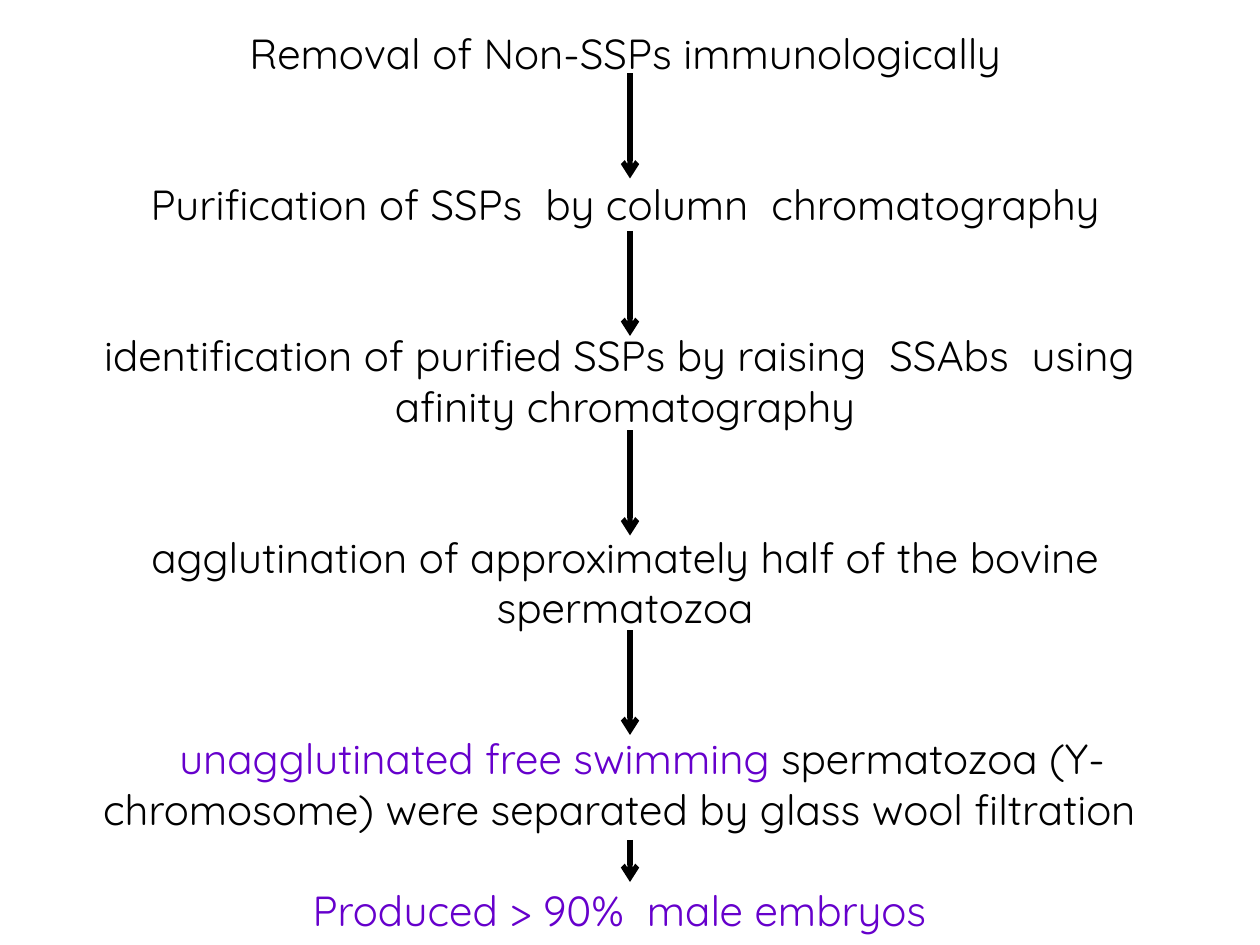
from lxml.etree import SubElement as Sub
from pptx import Presentation
from pptx.dml.color import RGBColor as Rgb
from pptx.enum.shapes import MSO_CONNECTOR as Conn
from pptx.enum.text import MSO_AUTO_SIZE as Auto, PP_ALIGN as Align
from pptx.oxml.ns import qn
from pptx.util import Inches, Pt

WIDE, HIGH = Inches(10), Inches(7.5)
ROWS = 90
FONT, SIZE, LINE = "Quicksand", 24, 28.8
HUES = {"ink": "000000", "key": "6600CC"}

STEPS = [
    (0, 0, [("Removal of Non-SSPs immunologically", "ink")]),
    (2, 0, [("Purification of SSPs  by column  chromatography", "ink")]),
    (2, 0, [("identification of purified SSPs by raising  SSAbs  using  "
             "afinity chromatography", "ink")]),
    (2, 0, [("agglutination of approximately half of the bovine "
             "spermatozoa", "ink")]),
    (2, 0.27, [("unagglutinated free swimming", "key"),
               (" spermatozoa (Y-chromosome) were separated by "
                "glass wool filtration ", "ink")]),
    (1, 0, [("Produced > 90%  male embryos ", "key")]),
]
ARROWS = [(7, 10), (22, 10), (41, 10), (60, 10), (80, 4)]


def row(num):
    return round(HIGH * num / ROWS)


def hue(name):
    return Rgb.from_string(HUES[name])


def add_step(para, gap, indent, runs):
    para.alignment = Align.CENTER
    para.space_before = Pt(gap * LINE)
    para.font.name = FONT
    para.font.size = Pt(SIZE)
    if indent:
        para._p.get_or_add_pPr().set("indent", str(Inches(indent)))
    for text, name in runs:
        run = para.add_run()
        run.text = text
        run.font.color.rgb = hue(name)


def add_flow(slide):
    box = slide.shapes.add_textbox(
        round(WIDE * 0.025), row(2), round(WIDE * 0.942), row(88.4))
    frame = box.text_frame
    frame.word_wrap = True
    frame.auto_size = Auto.SHAPE_TO_FIT_TEXT
    for num, step in enumerate(STEPS):
        para = frame.add_paragraph() if num else frame.paragraphs[0]
        add_step(para, *step)


def add_arrow(slide, top, span):
    mid = WIDE // 2
    arrow = slide.shapes.add_connector(
        Conn.STRAIGHT, mid, row(top), mid, row(top + span))
    arrow.line.color.rgb = hue("ink")
    arrow.line.width = Pt(3)
    Sub(arrow.line._get_or_add_ln(), qn("a:tailEnd"), type="arrow")
    Sub(arrow._element.spPr, qn("a:effectLst"))


def main():
    deck = Presentation()
    deck.slide_width, deck.slide_height = WIDE, HIGH
    slide = deck.slides.add_slide(deck.slide_layouts[6])
    add_flow(slide)
    for top, span in ARROWS:
        add_arrow(slide, top, span)
    deck.save("out.pptx")


if __name__ == "__main__":
    main()
